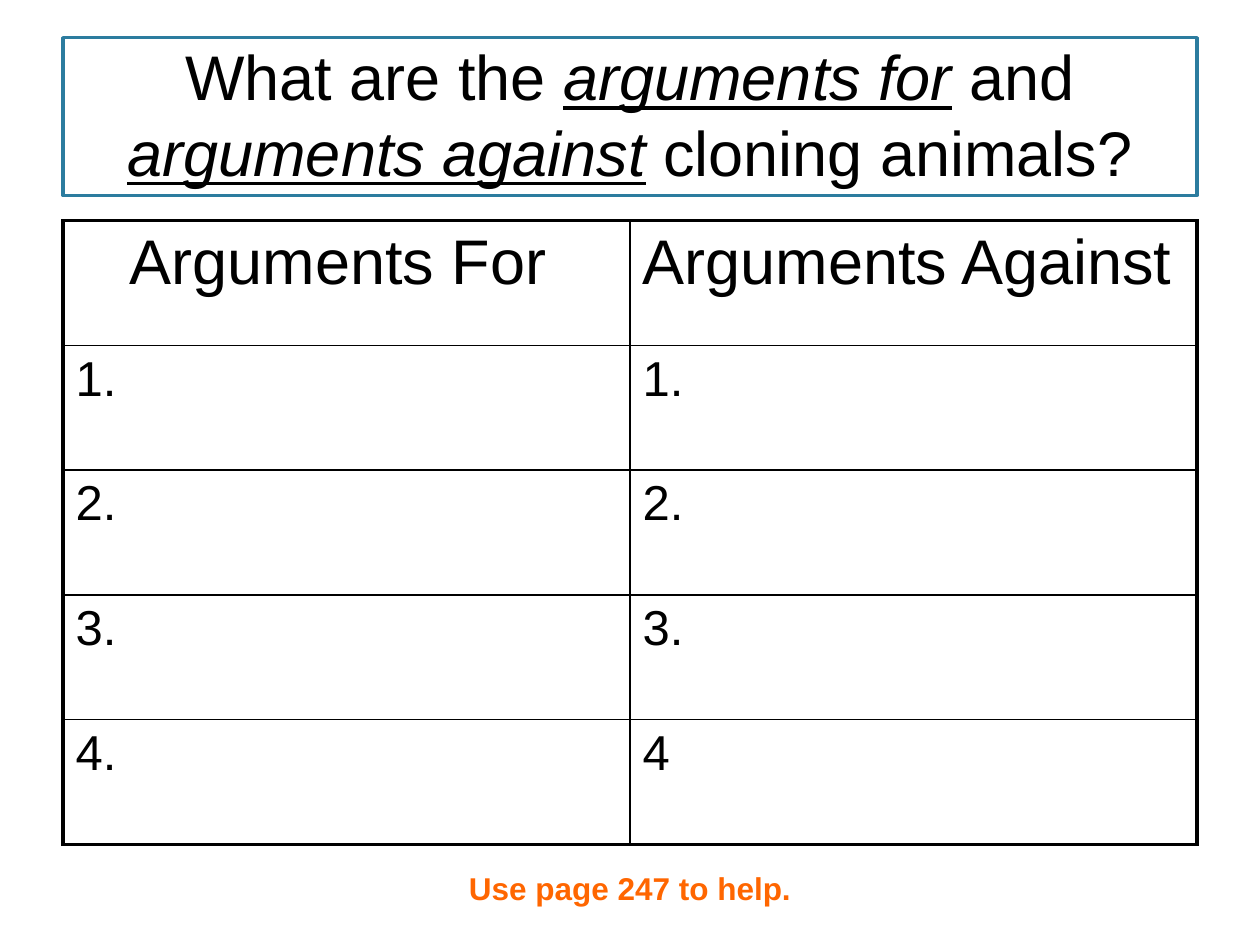
from lxml import etree
from pptx import Presentation
from pptx.dml.color import RGBColor
from pptx.enum.shapes import MSO_SHAPE
from pptx.enum.text import MSO_ANCHOR, PP_ALIGN
from pptx.oxml.ns import qn
from pptx.util import Cm, Pt

RECT = MSO_SHAPE.RECTANGLE
CENTER, LEFT = PP_ALIGN.CENTER, PP_ALIGN.LEFT
BOTTOM = MSO_ANCHOR.BOTTOM

COLORS = {"paper": "FFFFFF", "ink": "000000", "frame": "2C7C9F", "hint": "FF6600"}
FONT = "Arial"
MARGIN, WIDTH = Cm(1.27), Cm(22.86)
THIN, THICK = 1, 2.25

TITLE = [
    ("What are the ", {}),
    ("arguments for", {"italic": True, "underline": True}),
    (" and ", {}),
    ("arguments against", {"italic": True, "underline": True}),
    (" cloning animals?", {}),
]
ROWS = [
    ("Arguments For", "Arguments Against"),
    ("1.", "1."),
    ("2.", "2."),
    ("3.", "3."),
    ("4.", "4"),
]


def rgb(name):
    return RGBColor.from_string(COLORS[name])


def write(tf, runs, size, color="ink", align=LEFT):
    """Fill the first paragraph with (text, format) runs."""
    tf.word_wrap = True
    p = tf.paragraphs[0]
    p.alignment = align
    for text, formats in runs:
        r = p.add_run()
        r.text = text
        r.font.color.rgb = rgb(color)
        for key, value in {"name": FONT, "size": Pt(size), **formats}.items():
            setattr(r.font, key, value)


def add_title(s):
    sp = s.shapes.add_shape(RECT, MARGIN, Cm(0.76), WIDTH, Cm(3.18))
    sp.shadow.inherit = False
    sp.fill.solid()
    sp.fill.fore_color.rgb = rgb("paper")
    sp.line.color.rgb = rgb("frame")
    sp.line.width = Pt(2)
    sp.text_frame.vertical_anchor = BOTTOM
    write(sp.text_frame, TITLE, 36, align=CENTER)


def set_borders(cell, widths):
    """Draw the cell's edges; the lines must come before the fill."""
    tc_pr = cell._tc.get_or_add_tcPr()
    for i, (tag, width) in enumerate(widths.items()):
        ln = etree.Element(qn(f"a:{tag}"), w=str(Pt(width)))
        fill = etree.SubElement(ln, qn("a:solidFill"))
        etree.SubElement(fill, qn("a:srgbClr"), val=COLORS["ink"])
        tc_pr.insert(i, ln)


def add_arguments_table(s):
    n_rows, n_cols = len(ROWS), len(ROWS[0])
    frame = s.shapes.add_table(n_rows, n_cols, MARGIN, Cm(4.45), WIDTH, Cm(12.57))
    table = frame.table
    for i, texts in enumerate(ROWS):
        for j, text in enumerate(texts):
            cell = table.cell(i, j)
            cell.fill.background()
            write(cell.text_frame, [(text, {})], 36 if i == 0 else 28)
            # Thick outer edge, thin inner grid
            outer = {"lnL": j == 0, "lnR": j == n_cols - 1,
                     "lnT": i == 0, "lnB": i == n_rows - 1}
            set_borders(cell, {tag: THICK if edge else THIN
                               for tag, edge in outer.items()})
    # The first heading is indented
    table.cell(0, 0).margin_left = Cm(1.35)


def add_hint(s):
    sp = s.shapes.add_textbox(MARGIN, Cm(17.4), WIDTH, Cm(1.02))
    write(sp.text_frame, [("Use page 247 to help.", {"bold": True})], 18, "hint", CENTER)


def main():
    prs = Presentation()
    prs.slide_width, prs.slide_height = Cm(25.4), Cm(19.05)
    s = prs.slides.add_slide(prs.slide_layouts[6])
    add_title(s)
    add_arguments_table(s)
    add_hint(s)
    prs.save("out.pptx")


if __name__ == "__main__":
    main()
